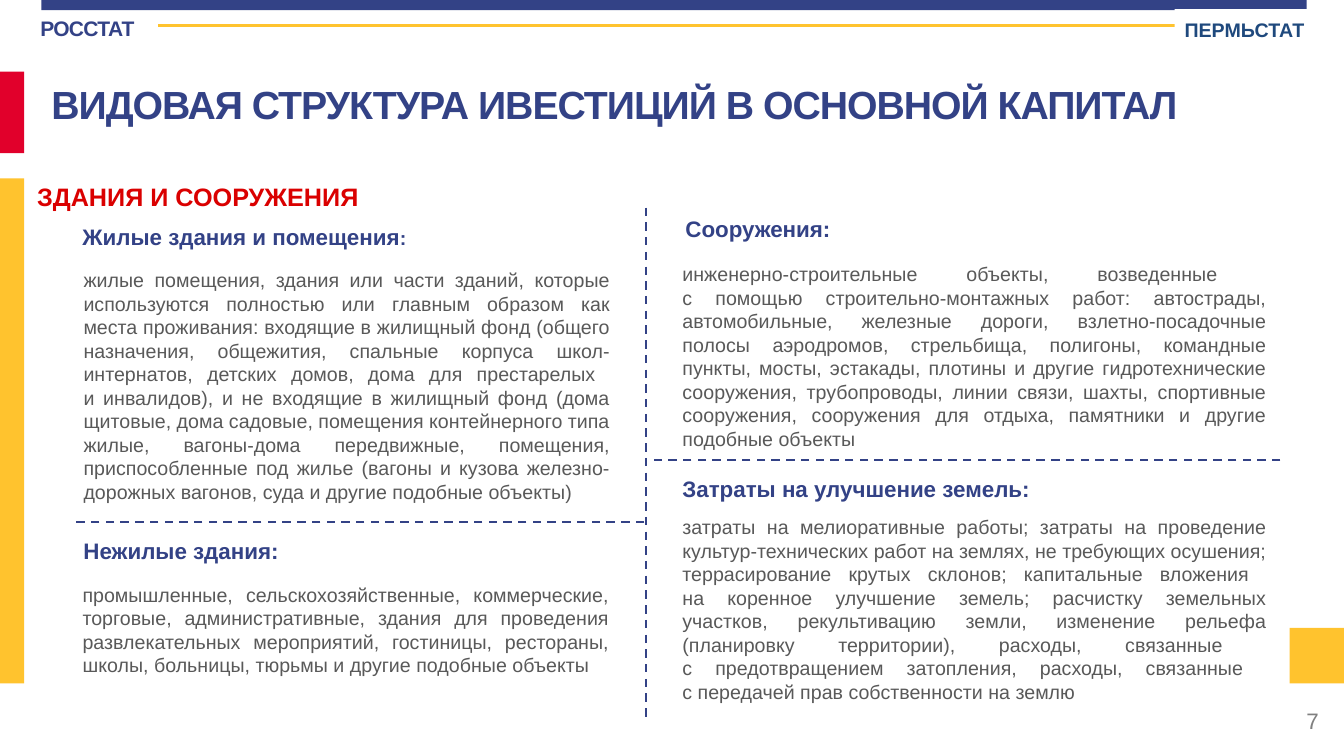
from dataclasses import dataclass

import pptx
import pptx.dml.color
import pptx.enum.dml
import pptx.enum.shapes
import pptx.enum.text
import pptx.oxml.ns
import pptx.util
from lxml import etree

Inches = pptx.util.Inches
Pt = pptx.util.Pt
RGBColor = pptx.dml.color.RGBColor
ALIGN = pptx.enum.text.PP_ALIGN
ANCHOR = pptx.enum.text.MSO_ANCHOR

NAVY = RGBColor(0x33, 0x42, 0x86)
RED = RGBColor(0xE1, 0x00, 0x2B)
HEADING_RED = RGBColor(0xDA, 0x00, 0x00)
YELLOW = RGBColor(0xFF, 0xC3, 0x2E)
WHITE = RGBColor(0xFF, 0xFF, 0xFF)
BLUE = RGBColor(0x1F, 0x49, 0x7D)
GRAY = RGBColor(0x80, 0x80, 0x80)
TEXT_GRAY = RGBColor(0x59, 0x59, 0x59)


@dataclass(frozen=True)
class Box:
    left: float
    top: float
    width: float
    height: float

    def lengths(self) -> tuple:
        return tuple(Inches(value) for value in (self.left, self.top, self.width, self.height))


@dataclass(frozen=True)
class Style:
    size: float
    color: RGBColor
    bold: bool = True
    spacing: int = 0


@dataclass(frozen=True)
class Block:
    box: Box
    color: RGBColor


@dataclass(frozen=True)
class Section:
    heading_box: Box
    heading: tuple
    body_box: Box
    body: str


@dataclass(frozen=True)
class Rule:
    start: tuple
    end: tuple
    color: RGBColor = NAVY
    width: float = 1.5
    dashed: bool = True


HEADING = Style(16, NAVY)
BODY = Style(14, TEXT_GRAY, bold=False)

BLOCKS = [
    Block(Box(0.41, 0, 12.55, 0.1), NAVY),
    Block(Box(0, 0.71, 0.24, 0.81), RED),
    Block(Box(0, 1.77, 0.24, 5.01), YELLOW),
    Block(Box(12.79, 6.23, 0.54, 0.55), YELLOW),
]

SECTIONS = [
    Section(
        Box(0.72, 2.16, 5.6, 0.37),
        (("Жилые здания и помещения", HEADING), (":", Style(14, NAVY))),
        Box(0.73, 2.61, 5.42, 2.46),
        "жилые помещения, здания или части зданий, которые используются полностью или главным "
        "образом как места проживания: входящие в жилищный фонд (общего назначения, общежития, "
        "спальные корпуса школ-интернатов, детских домов, дома для престарелых \n"
        "и инвалидов), и не входящие в жилищный фонд (дома щитовые, дома садовые, помещения "
        "контейнерного типа жилые, вагоны-дома передвижные, помещения, приспособленные под жилье "
        "(вагоны и кузова железно-дорожных вагонов, суда и другие подобные объекты)",
    ),
    Section(
        Box(0.73, 5.28, 5.6, 0.37),
        (("Нежилые здания:", HEADING),),
        Box(0.72, 5.73, 5.42, 1.04),
        "промышленные, сельскохозяйственные, коммерческие, торговые, административные, здания "
        "для проведения развлекательных мероприятий, гостиницы, рестораны, школы, больницы, "
        "тюрьмы и другие подобные объекты",
    ),
    Section(
        Box(6.7, 2.09, 6, 0.37),
        (("Сооружения:", HEADING),),
        Box(6.67, 2.55, 5.99, 1.99),
        "инженерно-строительные объекты, возведенные \n"
        "с помощью строительно-монтажных работ: автострады, автомобильные, железные дороги, "
        "взлетно-посадочные полосы аэродромов, стрельбища, полигоны, командные пункты, мосты, "
        "эстакады, плотины и другие гидротехнические сооружения, трубопроводы, линии связи, "
        "шахты, спортивные сооружения, сооружения для отдыха, памятники и другие подобные объекты",
    ),
    Section(
        Box(6.67, 4.66, 6, 0.37),
        (("Затраты на улучшение земель:", HEADING),),
        Box(6.67, 5.06, 5.99, 1.99),
        "затраты на мелиоративные работы; затраты на проведение культур-технических работ на "
        "землях, не требующих осушения; террасирование крутых склонов; капитальные вложения \n"
        "на коренное улучшение земель; расчистку земельных участков, рекультивацию земли, "
        "изменение рельефа (планировку территории), расходы, связанные \n"
        "с предотвращением затопления, расходы, связанные \n"
        "с передачей прав собственности на землю",
    ),
]

RULES = [
    Rule((6.41, 2.06), (6.41, 7.15)),
    Rule((6.39, 5.18), (0.72, 5.18)),
    Rule((12.7, 4.56), (6.44, 4.56)),
    Rule((1.57, 0.25), (12.95, 0.25), YELLOW, 2, False),
]


def write(shape, runs, align=ALIGN.LEFT, anchor=ANCHOR.TOP, line_spacing=None):
    frame = shape.text_frame
    frame.word_wrap = True
    frame.auto_size = pptx.enum.text.MSO_AUTO_SIZE.NONE
    frame.vertical_anchor = anchor
    paragraph = frame.paragraphs[0]
    paragraph.alignment = align
    paragraph.space_before = Pt(0)
    paragraph.line_spacing = line_spacing
    for text, style in runs:
        for index, line in enumerate(text.split("\n")):
            if index:
                paragraph.add_line_break()
            run = paragraph.add_run()
            run.text = line
            run.font.name = "Arial"
            run.font.size = Pt(style.size)
            run.font.bold = style.bold
            run.font.color.rgb = style.color
            if style.spacing:
                run.font._element.set("spc", str(style.spacing))
    return frame


def add_text(slide, box: Box, runs, **layout):
    return write(slide.shapes.add_textbox(*box.lengths()), runs, **layout)


def add_block(slide, block: Block):
    shape = slide.shapes.add_shape(
        pptx.enum.shapes.MSO_SHAPE.RECTANGLE, *block.box.lengths())
    shape.shadow.inherit = False
    shape.fill.solid()
    shape.fill.fore_color.rgb = block.color
    shape.line.fill.background()
    return shape


def add_rule(slide, rule: Rule) -> None:
    ends = [Inches(value) for value in rule.start + rule.end]
    connector = slide.shapes.add_connector(pptx.enum.shapes.MSO_CONNECTOR.STRAIGHT, *ends)
    connector.line.color.rgb = rule.color
    connector.line.width = Pt(rule.width)
    if rule.dashed:
        connector.line.dash_style = pptx.enum.dml.MSO_LINE.DASH
    etree.SubElement(connector._element.spPr, pptx.oxml.ns.qn("a:effectLst"))


def main() -> None:
    presentation = pptx.Presentation()
    presentation.slide_width = Inches(13.33)
    presentation.slide_height = Inches(7.5)
    slide = presentation.slides.add_slide(presentation.slide_layouts[5])

    title = slide.shapes.title
    title.left, title.top, title.width, title.height = Box(0.41, 0.8, 12, 0.76).lengths()
    write(title, [("ВИДОВАЯ СТРУКТУРА ИВЕСТИЦИЙ В ОСНОВНОЙ КАПИТАЛ",
                   Style(28, NAVY, spacing=-70))], line_spacing=0.9)

    for block in BLOCKS:
        add_block(slide, block)

    agency = add_text(slide, Box(0.4, 0.13, 1.15, 0.32),
                      [("РОССТАТ", Style(15, NAVY, spacing=-50))])
    agency.margin_left = agency.margin_right = agency.margin_bottom = 0
    agency.margin_top = Inches(0.02)

    add_text(slide, Box(0.27, 1.72, 6.37, 0.35),
             [("ЗДАНИЯ И СООРУЖЕНИЯ", Style(18, HEADING_RED))], line_spacing=Pt(24))
    for section in SECTIONS:
        add_text(slide, section.heading_box, section.heading)
        add_text(slide, section.body_box, [(section.body, BODY)], align=ALIGN.JUSTIFY)

    for rule in RULES:
        add_rule(slide, rule)

    branch = add_block(slide, Block(Box(11.65, 0.09, 1.53, 0.34), WHITE))
    write(branch, [("ПЕРМЬСТАТ", Style(14, BLUE))], line_spacing=1.15)
    add_text(slide, Box(10.18, 6.95, 3, 0.4), [("7", Style(16, GRAY, bold=False))],
             align=ALIGN.RIGHT, anchor=ANCHOR.MIDDLE)

    presentation.save("out.pptx")


if __name__ == "__main__":
    main()
